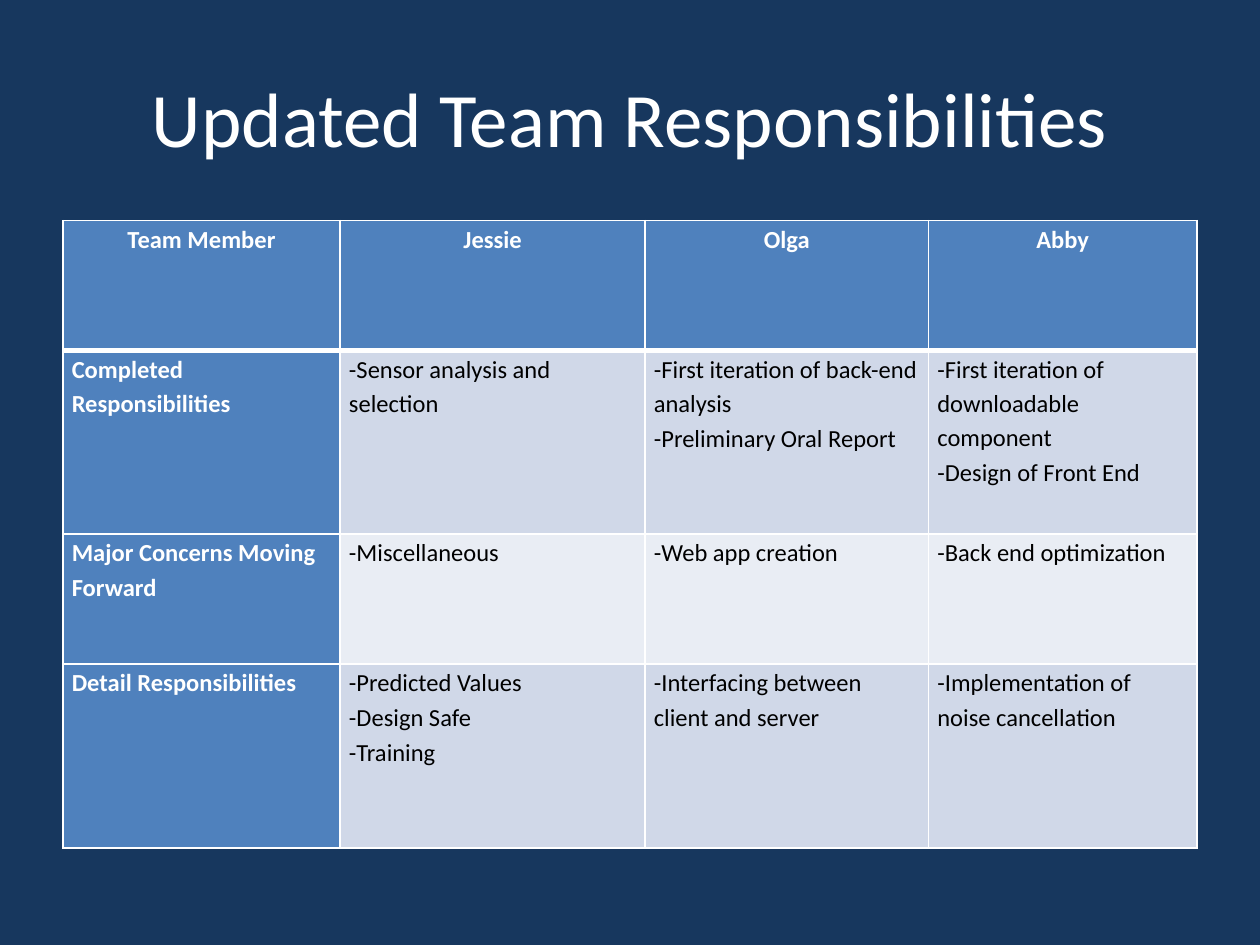
"""Build the team responsibilities slide."""
from dataclasses import dataclass

from lxml.etree import SubElement
from pptx import Presentation
from pptx.dml.color import RGBColor
from pptx.enum.text import MSO_ANCHOR, PP_ALIGN
from pptx.oxml.ns import qn
from pptx.slide import Slide
from pptx.table import _Cell
from pptx.text.text import _Paragraph
from pptx.util import Inches, Pt


@dataclass(frozen=True)
class Theme:
    """Colours, font and sizes of the slide."""
    background: str = "17375E"
    accent: str = "4F81BD"
    bands: tuple[str, str] = ("E9EDF4", "D0D8E8")
    light: str = "FFFFFF"
    dark: str = "000000"
    font: str = "Calibri"
    title_size: float = 44
    cell_size: float = 14
    thin_line: float = 1
    header_line: float = 3


@dataclass(frozen=True)
class Row:
    """One table row: its height, its label and the lines for each member."""
    height: float
    label: str
    entries: tuple[tuple[str, ...], ...]


THEME = Theme()
COLUMN_WIDTHS = (2.2, 2.42, 2.25, 2.13)
ROWS = (
    Row(1.03, "Team Member", (("Jessie",), ("Olga",), ("Abby",))),
    Row(1.46, "Completed Responsibilities", (
        ("-Sensor analysis and selection",),
        ("-First iteration of back-end analysis", "-Preliminary Oral Report"),
        ("-First iteration of downloadable component", "-Design of Front End"),
    )),
    Row(1.03, "Major Concerns Moving Forward", (
        ("-Miscellaneous",),
        ("-Web app creation",),
        ("-Back end optimization",),
    )),
    Row(1.46, "Detail Responsibilities", (
        ("-Predicted Values", "-Design Safe", "-Training"),
        ("-Interfacing between client and server",),
        ("-Implementation of noise cancellation",),
    )),
)


def add_span(para: _Paragraph, text: str, size: float, color: str, bold: bool = False) -> None:
    """Add one formatted run to a paragraph."""
    span = para.add_run()
    span.text = text
    span.font.name = THEME.font
    span.font.size = Pt(size)
    span.font.bold = bold
    span.font.color.rgb = RGBColor.from_string(color)


def add_border(cell: _Cell, side: str, width: float) -> None:
    """Draw a solid light line on one side of a cell."""
    properties = cell._tc.get_or_add_tcPr()
    line = SubElement(properties, qn(f"a:ln{side}"), w=str(Pt(width)))
    fill = SubElement(line, qn("a:solidFill"))
    SubElement(fill, qn("a:srgbClr"), val=THEME.light)


def fill_cell(cell: _Cell, lines: tuple[str, ...], row: int, column: int) -> None:
    """Style a cell by its place in the table and write its lines."""
    is_heading = row == 0 or column == 0
    heavy_side = {0: "B", 1: "T"}.get(row)
    for side in "LRTB":
        add_border(cell, side, THEME.header_line if side == heavy_side else THEME.thin_line)
    cell.fill.solid()
    background = THEME.accent if is_heading else THEME.bands[row % 2]
    cell.fill.fore_color.rgb = RGBColor.from_string(background)
    cell.margin_left = cell.margin_right = Inches(0.07)
    cell.margin_top = cell.margin_bottom = Inches(0)
    for index, text in enumerate(lines):
        frame = cell.text_frame
        para = frame.add_paragraph() if index else frame.paragraphs[0]
        para.alignment = PP_ALIGN.CENTER if row == 0 else PP_ALIGN.LEFT
        para.line_spacing = 1.15
        para.space_before = para.space_after = Pt(0.1)
        add_span(para, text, THEME.cell_size, THEME.light if is_heading else THEME.dark, is_heading)


def add_title(page: Slide, text: str) -> None:
    """Place and write the slide title."""
    box = page.shapes.title
    box.left, box.top, box.width, box.height = map(Inches, (0.5, 0.3, 9, 1.25))
    box.text_frame.vertical_anchor = MSO_ANCHOR.MIDDLE
    para = box.text_frame.paragraphs[0]
    para.alignment = PP_ALIGN.CENTER
    add_span(para, text, THEME.title_size, THEME.light)


def add_responsibilities(page: Slide) -> None:
    """Add the table of responsibilities by team member."""
    height = sum(row.height for row in ROWS)
    table = page.shapes.add_table(
        len(ROWS), len(COLUMN_WIDTHS),
        Inches(0.5), Inches(1.75), Inches(sum(COLUMN_WIDTHS)), Inches(height),
    ).table
    for column, width in zip(table.columns, COLUMN_WIDTHS):
        column.width = Inches(width)
    for row_index, row in enumerate(ROWS):
        table.rows[row_index].height = Inches(row.height)
        for column_index, lines in enumerate(((row.label,), *row.entries)):
            fill_cell(table.cell(row_index, column_index), lines, row_index, column_index)


def main() -> None:
    """Build and save the deck."""
    deck = Presentation()
    deck.slide_width, deck.slide_height = Inches(10), Inches(7.5)
    page = deck.slides.add_slide(deck.slide_layouts.get_by_name("Title Only"))
    page.background.fill.solid()
    page.background.fill.fore_color.rgb = RGBColor.from_string(THEME.background)
    add_title(page, "Updated Team Responsibilities")
    add_responsibilities(page)
    deck.save("out.pptx")


if __name__ == "__main__":
    main()
